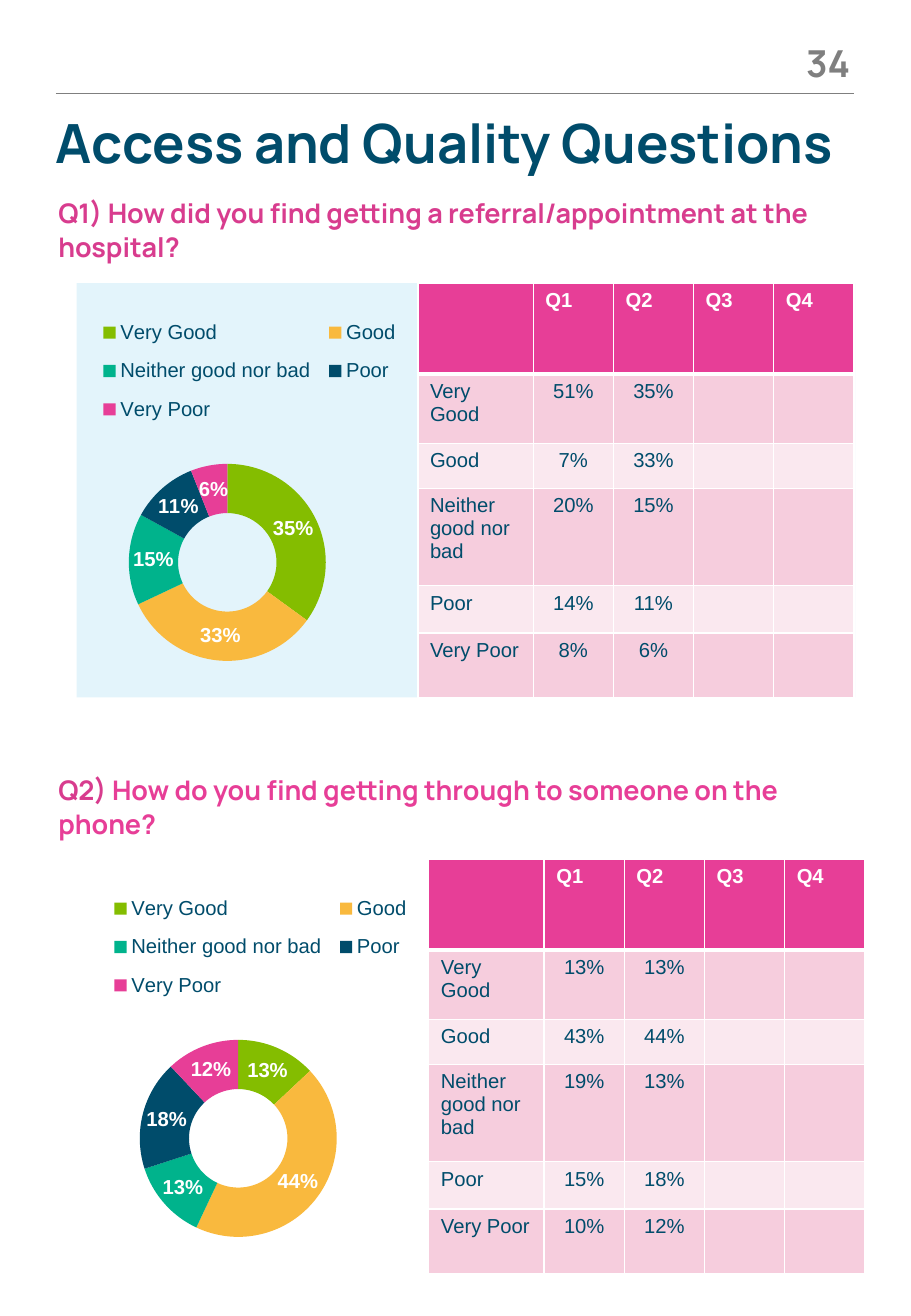
from dataclasses import dataclass
from lxml.etree import SubElement
from pptx import Presentation
from pptx.chart.data import CategoryChartData
from pptx.dml.color import RGBColor
from pptx.enum.chart import XL_CHART_TYPE, XL_LEGEND_POSITION
from pptx.enum.shapes import MSO_CONNECTOR, MSO_SHAPE
from pptx.enum.text import PP_ALIGN
from pptx.oxml.ns import qn
from pptx.util import Inches, Pt


@dataclass(frozen=True)
class Theme:
    navy: str = "004C6B"
    pink: str = "E73E97"
    rose: str = "D83C8E"
    gray: str = "7F7F7F"
    sky: str = "E3F4FB"
    white: str = "FFFFFF"
    bands: tuple = ("F6CDDD", "FAE8EF")
    slices: tuple = ("84BD00", "F9B93E", "00B38C", "004C6B", "E73E97")
    head: str = "Manrope"
    body: str = "Arial"
    title: int = 32
    page: int = 22
    ask: int = 16
    small: int = 12


THEME = Theme()
RATES = ["Very Good", "Good", "Neither good nor bad", "Poor", "Very Poor"]
TERMS = ["Q1", "Q2", "Q3", "Q4"]
COLS = [0.95] + [0.66] * len(TERMS)
ROWS = [0.75, 0.57, 0.37, 0.8, 0.39, 0.53]


def style(font, face, size, color, bold=False):
    font.name, font.size, font.bold = face, Pt(size), bold
    font.color.rgb = RGBColor.from_string(color)


def paint(fill, color):
    fill.solid()
    fill.fore_color.rgb = RGBColor.from_string(color)


# Text box with one paragraph of (text, color) parts
def add_text(slide, box, parts, size, align=PP_ALIGN.LEFT, space=1.0):
    frame = slide.shapes.add_textbox(*map(Inches, box)).text_frame
    frame.word_wrap = True
    frame.margin_left = frame.margin_right = 0
    frame.margin_top = frame.margin_bottom = 0
    para = frame.paragraphs[0]
    para.alignment, para.line_spacing = align, space
    for text, color in parts:
        run = para.add_run()
        run.text = text
        style(run.font, THEME.head, size, color, True)


def add_rule(slide, left, right, top):
    rule = slide.shapes.add_connector(
        MSO_CONNECTOR.STRAIGHT, Inches(left), Inches(top), Inches(right), Inches(top))
    rule.line.width = Pt(0.75)
    rule.line.color.rgb = RGBColor.from_string(THEME.gray)
    SubElement(rule._element.spPr, qn("a:effectLst"))


def add_panel(slide, box):
    panel = slide.shapes.add_shape(MSO_SHAPE.RECTANGLE, *map(Inches, box))
    panel.shadow.inherit = False
    paint(panel.fill, THEME.sky)
    panel.line.fill.background()


# Fixed place inside the chart, as shares of its size
def place(node, index, inner, **shares):
    for old in node.findall(qn("c:layout")):
        node.remove(old)
    layout = SubElement(node, qn("c:layout"))
    node.insert(index, layout)
    manual = SubElement(layout, qn("c:manualLayout"))
    if inner:
        SubElement(manual, qn("c:layoutTarget"), val="inner")
    for side in "xy":
        SubElement(manual, qn(f"c:{side}Mode"), val="edge")
    for side, share in shares.items():
        SubElement(manual, qn(f"c:{side}"), val=str(share))


def add_ring(slide, left, top, shares):
    data = CategoryChartData(number_format="0")
    data.categories = RATES
    data.add_series("Series 1", shares)
    box = map(Inches, (left, top, 3.06, 3.62))
    chart = slide.shapes.add_chart(XL_CHART_TYPE.DOUGHNUT, *box, data).chart
    style(chart.font, THEME.body, 10, THEME.navy)
    chart.has_title = False

    # Legend
    chart.has_legend = True
    legend = chart.legend
    legend.position = XL_LEGEND_POSITION.TOP
    legend.include_in_layout = False
    style(legend.font, THEME.body, THEME.small, THEME.navy)
    place(legend._element, 1, False, x=0.08, y=0.05, w=0.85, h=0.3)

    # Slices and labels
    plot = chart.plots[0]
    plot.vary_by_categories = True
    place(chart._chartSpace.chart.plotArea, 0, True, x=0.18, y=0.41, w=0.53, h=0.45)
    for index, color in enumerate(THEME.slices):
        point = plot.series[0].points[index]
        paint(point.format.fill, color)
        point.format.line.fill.background()
    plot.has_data_labels = True
    labels = plot.data_labels
    labels.show_percentage, labels.show_value = True, False
    labels.number_format, labels.number_format_is_linked = "0%", False
    style(labels.font, THEME.body, THEME.small, THEME.white, True)


def edge(cell, widths):
    props = cell._tc.get_or_add_tcPr()
    for index, (side, width) in enumerate(zip("LRTB", widths)):
        line = SubElement(props, qn(f"a:ln{side}"), w=str(Pt(width)))
        props.insert(index, line)
        SubElement(SubElement(line, qn("a:solidFill")), qn("a:srgbClr"), val=THEME.white)


def fill_cell(cell, text, row, col):
    cell.text = text
    para = cell.text_frame.paragraphs[0]
    if row and col:
        para.alignment = PP_ALIGN.CENTER
    for run in para.runs:
        style(run.font, THEME.body, THEME.small, THEME.navy if row else THEME.white, not row)
    if not text:
        SubElement(para._p, qn("a:endParaRPr"), sz=str(THEME.small * 100))
    paint(cell.fill, THEME.bands[(row - 1) % 2] if row else THEME.pink)
    edge(cell, (1, 1, 3 if row == 1 else 1, 1 if row else 3))


def add_grid(slide, left, top, first, second):
    lines = [[""] + TERMS]
    for rate, one, two in zip(RATES, first, second):
        lines.append([rate, f"{one}%", f"{two}%", "", ""])
    box = map(Inches, (left, top, sum(COLS), sum(ROWS)))
    table = slide.shapes.add_table(len(ROWS), len(COLS), *box).table
    for col, width in zip(table.columns, COLS):
        col.width = Inches(width)
    for row, height in zip(table.rows, ROWS):
        row.height = Inches(height)
    for row, line in enumerate(lines):
        for col, text in enumerate(line):
            fill_cell(table.cell(row, col), text, row, col)


# Question, ring of the latest term and table of all terms
def add_block(slide, left, ask_top, top, parts, first, second):
    add_text(slide, (0.48, ask_top, 6.58, 0.57), parts, THEME.ask, space=1.06)
    add_ring(slide, left, top, second)
    add_grid(slide, left + 2.93, top, first, second)


def main():
    deck = Presentation()
    deck.slide_width, deck.slide_height = Inches(7.5), Inches(10.83)
    slide = deck.slides.add_slide(deck.slide_layouts[6])

    # Page head
    add_rule(slide, 0.46, 7.03, 0.77)
    add_panel(slide, (0.63, 2.33, 6.41, 3.41))
    add_text(slide, (0.46, 0.9, 6.9, 0.53),
             [("Access and Quality Questions", THEME.navy)], THEME.title)
    add_text(slide, (6.36, 0.33, 0.64, 0.39), [("34", THEME.gray)],
             THEME.page, PP_ALIGN.RIGHT)

    # Questions
    add_block(slide, 0.51, 1.6, 2.33,
              [("Q1) How did you find getting a referral/appointment at the hospital?",
                THEME.rose)],
              (51, 7, 20, 14, 8), (35, 33, 15, 11, 6))
    add_block(slide, 0.6, 6.35, 7.07,
              [("Q2) ", THEME.rose),
               ("How do you find getting through to someone on the phone?", THEME.pink)],
              (13, 43, 19, 15, 10), (13, 44, 13, 18, 12))
    deck.save("out.pptx")


if __name__ == "__main__":
    main()
